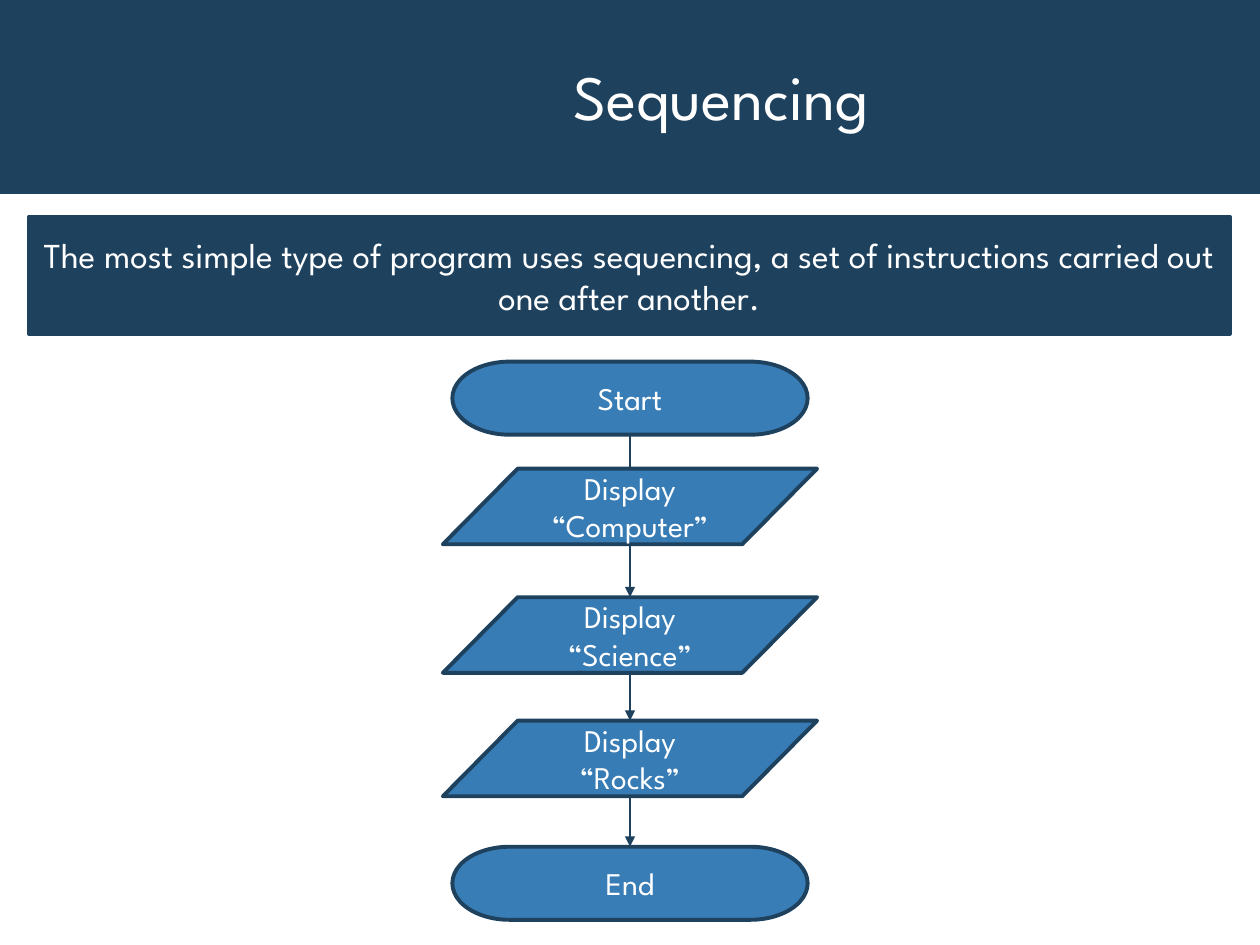
from dataclasses import dataclass
from itertools import pairwise

from pptx import Presentation, util as u
from pptx.dml.color import RGBColor
from pptx.enum import shapes, text
from pptx.oxml import parse_xml
from pptx.oxml.ns import nsdecls, qn

NAVY = RGBColor(0x1E, 0x41, 0x5E)
BLUE = RGBColor(0x38, 0x7D, 0xB6)
STEEL = RGBColor(0x38, 0x7C, 0xB5)
WHITE = RGBColor(0xFF, 0xFF, 0xFF)
FONT = "League Spartan"

WIDTH, HEIGHT = u.Inches(10), u.Inches(7.5)
COLUMNS, ROWS = 100, 75
CENTRE = COLUMNS / 2

SHAPE = shapes.MSO_SHAPE


@dataclass(frozen=True)
class Kind:
    """What all steps of one flowchart type share; sizes in columns and rows."""
    preset: SHAPE
    fill: RGBColor
    width: float
    height: float


@dataclass(frozen=True)
class Step:
    label: str
    kind: Kind
    top: float
    entry: float = 0  # rows that the incoming arrow runs on behind the step

    @property
    def bottom(self) -> float:
        return self.top + self.kind.height


TERMINATOR = Kind(SHAPE.FLOWCHART_TERMINATOR, BLUE, 28.2, 5.8)
OUTPUT = Kind(SHAPE.FLOWCHART_DATA, STEEL, 29.7, 6)

STEPS = (
    Step("Start", TERMINATOR, 28.7),
    Step("Display “Computer”", OUTPUT, 37.2, entry=1.1),
    Step("Display “Science”", OUTPUT, 47.4),
    Step("Display “Rocks”", OUTPUT, 57.2),
    Step("End", TERMINATOR, 67.2),
)


def col(count: float) -> int:
    return round(WIDTH * count / COLUMNS)


def row(count: float) -> int:
    return round(HEIGHT * count / ROWS)


def write(frame, words: str, size: float) -> None:
    frame.text = words
    frame.word_wrap = True
    frame.vertical_anchor = text.MSO_ANCHOR.MIDDLE
    line = frame.paragraphs[0]
    line.alignment = text.PP_ALIGN.CENTER
    line.font.name, line.font.size = FONT, u.Pt(size)
    line.font.color.rgb = WHITE


def add_block(slide, preset: SHAPE, left: float, top: float, width: float,
              height: float, fill: RGBColor, outlined: bool = True):
    block = slide.shapes.add_shape(
        preset, col(left), row(top), col(width), row(height))
    block.shadow.inherit = False
    block.fill.solid()
    block.fill.fore_color.rgb = fill
    if outlined:
        block.line.color.rgb = NAVY
        block.line.width = u.Pt(2.25)
    else:
        block.line.fill.background()
    return block


def add_step(slide, step: Step) -> None:
    kind = step.kind
    block = add_block(slide, kind.preset, CENTRE - kind.width / 2, step.top,
                      kind.width, kind.height, kind.fill)
    write(block.text_frame, step.label, 18)


def add_arrow(slide, start: Step, end: Step) -> None:
    arrow = slide.shapes.add_connector(
        shapes.MSO_CONNECTOR.STRAIGHT, col(CENTRE), row(start.bottom),
        col(CENTRE), row(end.top + end.entry))
    arrow.line.color.rgb = NAVY
    arrow.line.width = u.Pt(1.5)
    properties = arrow._element.spPr
    properties.find(qn("a:ln")).append(
        parse_xml(f'<a:tailEnd {nsdecls("a")} type="triangle"/>'))
    properties.append(parse_xml(f'<a:effectLst {nsdecls("a")}/>'))


def add_heading(slide) -> None:
    band = add_block(slide, SHAPE.RECTANGLE, 0, 0, COLUMNS, 15.4, NAVY,
                     outlined=False)
    heading = slide.shapes.title
    band._element.addnext(heading._element)  # the title goes in front
    heading.left, heading.top = col(14.5), row(2.4)
    heading.width, heading.height = col(85.5), row(11.1)
    write(heading.text_frame, "Sequencing", 36)
    heading.text_frame.paragraphs[0].line_spacing = 0.9


def add_definition(slide) -> None:
    definition = add_block(slide, SHAPE.RECTANGLE, 2.3, 17.2, 95.3, 9.3, NAVY)
    write(definition.text_frame,
          "The most simple type of program uses sequencing, a set of "
          "instructions carried out one after another.", 20)


def add_flowchart(slide) -> None:
    """Arrows lie over the terminators and under the output steps."""
    for step in STEPS:
        if step.kind is TERMINATOR:
            add_step(slide, step)
    for start, end in pairwise(STEPS):
        add_arrow(slide, start, end)
    for step in STEPS:
        if step.kind is OUTPUT:
            add_step(slide, step)


def main() -> None:
    deck = Presentation()
    deck.slide_width, deck.slide_height = WIDTH, HEIGHT
    title_only = deck.slide_layouts.get_by_name("Title Only")
    slide = deck.slides.add_slide(title_only)
    add_heading(slide)
    add_definition(slide)
    add_flowchart(slide)
    deck.save("out.pptx")


if __name__ == "__main__":
    main()
